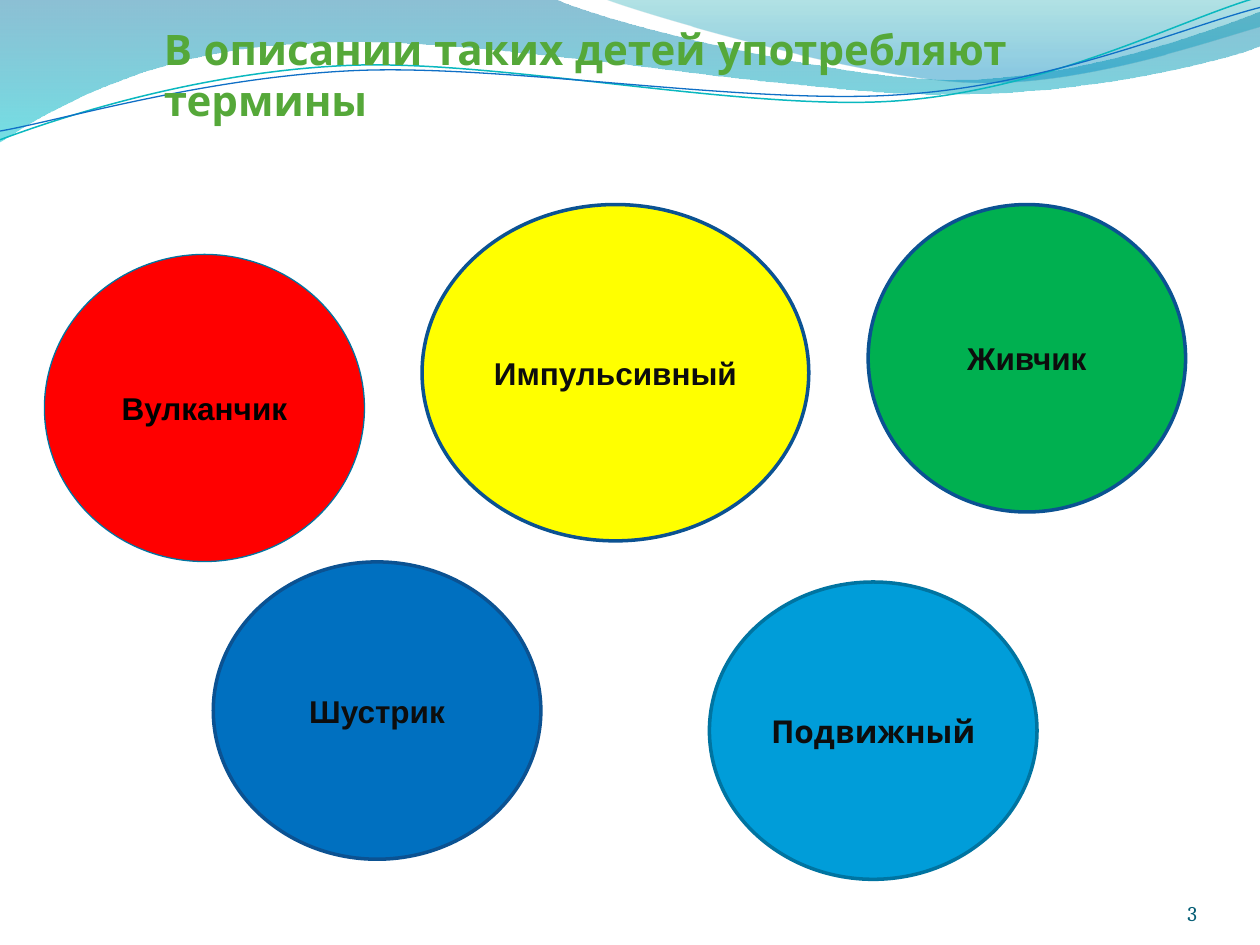
import math
from collections import namedtuple
from dataclasses import dataclass

from lxml import etree
from pptx import Presentation
from pptx.dml.color import RGBColor
from pptx.enum import shapes, text
from pptx.oxml import ns
from pptx.util import Pt

Box = namedtuple("Box", "left top width height")
Term = namedtuple("Term", "label box fill line weight font ink")


@dataclass(frozen=True)
class Theme:
    """Colours, fonts and type sizes of the slide."""
    title: str = "55A839"
    number: str = "045D75"
    ink: str = "0D0D0D"
    black: str = "000000"
    navy: str = "0B5292"
    teal: str = "0074A1"
    red: str = "FF0000"
    yellow: str = "FFFF00"
    green: str = "00B050"
    blue: str = "0070C0"
    sky: str = "009DD9"
    wide_wave: tuple = ((0, "0074A1", 45), (1, "00C6CF", 55))
    right_wave: tuple = ((0, "00A1A9", 30), (0.8, "008BBF", 45))
    upper_line: str = "0AB8BF"
    lower_line: str = "0F6FC6"
    display: str = "Quicksand"
    body: str = "Arial"
    serif: str = "Cambria"
    title_size: int = 24
    term_size: int = 18
    number_size: int = 12


THEME = Theme()
LINE_TILT = -2.7

WIDE_WAVE = [
    (0, 0), (316.8, -0.7),
    (342.7, 12.2, 478.1, 45.4, 545.8, 45.4),
    (614.2, 45.4, 689.8, 18.7, 720, 6.5), (720.7, 25.9),
    (709.2, 31.7, 626.4, 54.7, 537.1, 54),
    (447.8, 54, 275, 20.2, 185, 24.5),
    (92.9, 25.9, 33.1, 59.8, -0.7, 81.4),
]
RIGHT_WAVE = [
    (344.9, -0.7),
    (366.5, 7.9, 491, 44.6, 553.7, 46.8),
    (616.3, 49.7, 691.9, 23, 720, 15.1), (720, 0),
]
UPPER_LINE = [
    (0, 79.9),
    (34.6, 67, 113.8, 41, 199.4, 37.4),
    (284.4, 33.8, 427, 64.1, 513.4, 57.6),
    (599.8, 51.1, 675.4, 10.8, 718.6, -1.4),
]
LOWER_LINE = [
    (0, 74.9),
    (33.8, 69.1, 118.1, 43.9, 203.8, 40.3),
    (290.2, 36.7, 429.8, 60.5, 516.2, 54),
    (601.9, 48.2, 677.5, 15.1, 720, 4.3),
]

TERMS = [
    Term("Импульсивный", Box(241.2, 8.9, 221, 192.2),
         THEME.yellow, THEME.navy, 2, THEME.body, THEME.ink),
    Term("Шустрик", Box(121.9, 213.1, 187.2, 169.9),
         THEME.blue, THEME.navy, 2, THEME.body, THEME.ink),
    Term("Вулканчик", Box(25.4, 37.4, 182.9, 175.5),
         THEME.red, THEME.teal, 0.75, THEME.body, THEME.black),
    Term("Подвижный", Box(405.4, 224.6, 187.2, 169.9),
         THEME.sky, THEME.teal, 2, THEME.display, THEME.ink),
    Term("Живчик", Box(496.1, 8.9, 181.4, 175.7),
         THEME.green, THEME.navy, 2, THEME.body, THEME.ink),
]


def rgb(value):
    """Turn a hex string into a colour."""
    return RGBColor.from_string(value)


def write(shape, words, font, size, colour, align, anchor, bold=False):
    """Put one formatted paragraph into a shape."""
    frame = shape.text_frame
    frame.text = words
    frame.word_wrap = True
    frame.auto_size = text.MSO_AUTO_SIZE.NONE
    frame.vertical_anchor = anchor
    para = frame.paragraphs[0]
    para.alignment = align
    span = para.runs[0]
    span.font.name = font
    span.font.size = Pt(size)
    span.font.bold = bold
    span.font.color.rgb = rgb(colour)


def clear_insets(frame, top=0):
    """Remove the inner margins, keeping the given top one."""
    frame.margin_left = frame.margin_right = frame.margin_bottom = 0
    frame.margin_top = Pt(top)


def turn(point, centre, degrees):
    """Rotate a point clockwise about a centre."""
    angle = math.radians(degrees)
    dx, dy = point[0] - centre[0], point[1] - centre[1]
    return (centre[0] + dx * math.cos(angle) - dy * math.sin(angle),
            centre[1] + dx * math.sin(angle) + dy * math.cos(angle))


def bend(curve, outline):
    """Merge each run of three straight steps of a curved segment into a cubic."""
    steps = list(curve.element.iter(ns.qn("a:lnTo")))
    for segment in outline[1:]:
        count = len(segment) // 2
        group, steps = steps[:count], steps[count:]
        if count == 3:
            cubic = etree.Element(ns.qn("a:cubicBezTo"))
            group[0].addprevious(cubic)
            for step in group:
                cubic.append(step[0])
                step.getparent().remove(step)


def add_curve(page, box, outline, close, tilt=0):
    """Draw an outline measured from the corner of the box."""
    centre = (box.width / 2, box.height / 2)
    points = [turn(segment[i:i + 2], centre, -tilt)
              for segment in outline for i in range(0, len(segment), 2)]
    points = [(Pt(box.left + x), Pt(box.top + y)) for x, y in points]
    builder = page.shapes.build_freeform(*points[0], scale=1.0)
    builder.add_line_segments(points[1:], close=close)
    curve = builder.convert_to_shape()
    bend(curve, outline)
    curve.rotation = tilt
    curve.shadow.inherit = False
    return curve


def add_waves(page, box):
    """Draw the translucent waves and the two thin lines of the header."""
    for outline, stops in ((WIDE_WAVE, THEME.wide_wave), (RIGHT_WAVE, THEME.right_wave)):
        wave = add_curve(page, box, outline, True)
        wave.line.fill.background()
        wave.fill.gradient()
        wave.fill.gradient_angle = 270
        for stop, (position, colour, _) in zip(wave.fill.gradient_stops, stops):
            stop.position = position
            stop.color.rgb = rgb(colour)
        for tone, (_, _, opacity) in zip(wave.element.spPr.iter(ns.qn("a:srgbClr")), stops):
            etree.SubElement(tone, ns.qn("a:alpha")).set("val", str(opacity * 1000))
    for outline, colour, weight in ((UPPER_LINE, THEME.upper_line, 0.85),
                                    (LOWER_LINE, THEME.lower_line, 0.75)):
        line = add_curve(page, box, outline, False, LINE_TILT)
        line.fill.background()
        line.line.color.rgb = rgb(colour)
        line.line.width = Pt(weight)


def add_title(page, box):
    """Set the title placeholder above the waves."""
    title = page.shapes.title
    title.element.getparent().append(title.element)
    title.left, title.top, title.width, title.height = map(Pt, box)
    write(title, "В описании таких детей употребляют термины", THEME.display,
          THEME.title_size, THEME.title, text.PP_ALIGN.LEFT, text.MSO_ANCHOR.BOTTOM, True)
    clear_insets(title.text_frame, 3.6)


def add_number(page, box):
    """Write the page number."""
    number = page.shapes.add_textbox(*map(Pt, box))
    write(number, "3", THEME.serif, THEME.number_size, THEME.number,
          text.PP_ALIGN.RIGHT, text.MSO_ANCHOR.BOTTOM)
    clear_insets(number.text_frame)


def add_terms(page, box):
    """Draw the labelled circles measured from the corner of the box."""
    for term in TERMS:
        spot = term.box._replace(left=box.left + term.box.left, top=box.top + term.box.top)
        circle = page.shapes.add_shape(
            shapes.MSO_SHAPE.FLOWCHART_CONNECTOR, *map(Pt, spot))
        circle.shadow.inherit = False
        circle.fill.solid()
        circle.fill.fore_color.rgb = rgb(term.fill)
        circle.line.color.rgb = rgb(term.line)
        circle.line.width = Pt(term.weight)
        write(circle, term.label, term.font, THEME.term_size, term.ink,
              text.PP_ALIGN.CENTER, text.MSO_ANCHOR.MIDDLE, True)


def main():
    """Build and save the deck."""
    deck = Presentation()
    deck.slide_width, deck.slide_height = Pt(720), Pt(540)
    page = deck.slides.add_slide(deck.slide_layouts[5])
    add_waves(page, Box(0, 0, 720, 82))
    add_title(page, Box(93.6, 0, 530.6, 71.3))
    add_number(page, Box(624.2, 500.4, 59.8, 28.8))
    add_terms(page, Box(0, 108, 720, 396))
    deck.save("out.pptx")


if __name__ == "__main__":
    main()
